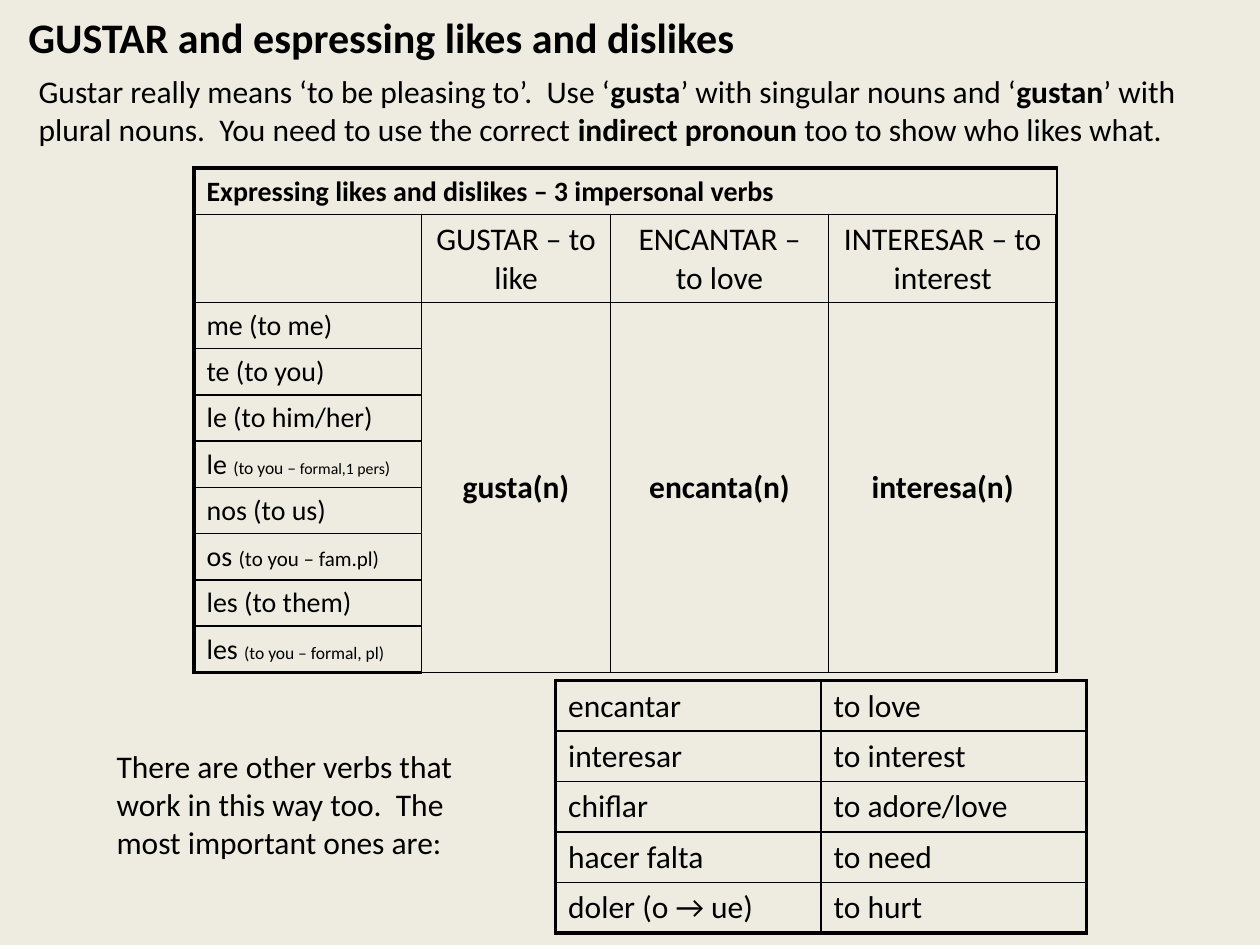
from dataclasses import dataclass

from lxml import etree
from pptx import Presentation
from pptx import util as u
from pptx.dml.color import RGBColor
from pptx.enum import text
from pptx.oxml import ns

Pt = u.Pt


@dataclass(frozen=True)
class Theme:
    font: str = "Calibri"
    ink: str = "000000"
    paper: str = "EEECE1"
    heading: int = 24
    body: int = 18
    row: int = 16
    note: int = 12
    small: int = 10
    tiny: int = 9
    frame: float = 2.25
    rule: float = 1


THEME = Theme()

PRONOUNS = [
    ["me (to me)"],
    ["te (to you)"],
    ["le (to him/her)"],
    ["le ", ("(to you – ", {"size": THEME.small}),
     ("formal,1 pers", {"size": THEME.tiny}), (")", {"size": THEME.small})],
    ["nos (to us)"],
    ["os ", ("(to you – fam.pl)", {"size": THEME.note})],
    ["les (to them)"],
    ["les ", ("(to you – formal, pl)", {"size": THEME.small})],
]
IMPERSONAL_VERBS = [
    ("GUSTAR – to like", "gusta(n)"),
    ("ENCANTAR – to love", "encanta(n)"),
    ("INTERESAR – to interest", "interesa(n)"),
]
OTHER_VERBS = [
    ("encantar", "to love"),
    ("interesar", "to interest"),
    ("chiflar", "to adore/love"),
    ("hacer falta", "to need"),
    ("doler (o → ue)", "to hurt"),
]


def write(frame, *parts, size=THEME.body, bold=False, align=text.PP_ALIGN.LEFT):
    paragraph = frame.paragraphs[0]
    paragraph.alignment = align
    for part in parts:
        wording, changes = (part, {}) if isinstance(part, str) else part
        run = paragraph.add_run()
        run.text = wording
        run.font.name = THEME.font
        run.font.size = Pt(changes.get("size", size))
        run.font.bold = changes.get("bold", bold)
        run.font.color.rgb = RGBColor.from_string(THEME.ink)


def place(box, left, top, width, height):
    box.left, box.top, box.width, box.height = map(Pt, (left, top, width, height))
    frame = box.text_frame
    frame.word_wrap = True
    frame.auto_size = text.MSO_AUTO_SIZE.SHAPE_TO_FIT_TEXT
    frame.vertical_anchor = text.MSO_ANCHOR.TOP
    return frame


def add_note(slide, bounds, *parts):
    box = slide.shapes.add_textbox(*map(Pt, bounds))
    write(place(box, *bounds), *parts)


def set_border(cell, side, weight):
    properties = cell._tc.get_or_add_tcPr()
    line = etree.SubElement(properties, ns.qn(f"a:ln{side}"), w=str(Pt(weight)))
    fill = etree.SubElement(line, ns.qn("a:solidFill"))
    etree.SubElement(fill, ns.qn("a:srgbClr"), val=THEME.ink)


def add_grid(slide, left, top, widths, heights):
    grid = slide.shapes.add_table(
        len(heights), len(widths), Pt(left), Pt(top),
        Pt(sum(widths)), Pt(sum(heights))).table
    grid.first_row = grid.horz_banding = False
    for column, width in zip(grid.columns, widths):
        column.width = Pt(width)
    for row, height in zip(grid.rows, heights):
        row.height = Pt(height)
    for r in range(len(heights)):
        for c in range(len(widths)):
            cell = grid.cell(r, c)
            outer = {"L": c == 0, "R": c == len(widths) - 1,
                     "T": r == 0, "B": r == len(heights) - 1}
            for side, on_frame in outer.items():
                set_border(cell, side, THEME.frame if on_frame else THEME.rule)
            cell.fill.background()
    return grid


def add_pronoun_table(slide):
    row_height = 26.4
    heights = [row_height, 50.4] + [row_height] * len(PRONOUNS)
    grid = add_grid(slide, 110.9, 96, [130, 108, 124.6, 130.4], heights)
    last = len(heights) - 1
    grid.cell(0, 0).merge(grid.cell(0, len(IMPERSONAL_VERBS)))
    write(grid.cell(0, 0).text_frame,
          "Expressing likes and dislikes – 3 impersonal verbs",
          size=THEME.row, bold=True)
    for c, (verb, form) in enumerate(IMPERSONAL_VERBS, 1):
        write(grid.cell(1, c).text_frame, verb, align=text.PP_ALIGN.CENTER)
        form_cell = grid.cell(2, c)
        form_cell.merge(grid.cell(last, c))
        form_cell.vertical_anchor = text.MSO_ANCHOR.MIDDLE
        write(form_cell.text_frame, form, bold=True, align=text.PP_ALIGN.CENTER)
    for r, pronoun in enumerate(PRONOUNS, 2):
        write(grid.cell(r, 0).text_frame, *pronoun, size=THEME.row)


def add_verb_table(slide):
    grid = add_grid(slide, 317.5, 389, [151.7] * 2, [28.8] * len(OTHER_VERBS))
    for r, entry in enumerate(OTHER_VERBS):
        for c, wording in enumerate(entry):
            write(grid.cell(r, c).text_frame, wording)


def main():
    deck = Presentation()
    deck.slide_width, deck.slide_height = Pt(720), Pt(540)
    slide = deck.slides.add_slide(deck.slide_layouts.get_by_name("Title Only"))
    slide.background.fill.solid()
    slide.background.fill.fore_color.rgb = RGBColor.from_string(THEME.paper)

    write(place(slide.shapes.title, 9, 3, 482, 36),
          "GUSTAR and espressing likes and dislikes",
          size=THEME.heading, bold=True)
    strong = {"bold": True}
    add_note(slide, (15, 37.5, 685.5, 51),
             "Gustar really means ‘to be pleasing to’.  Use ‘", ("gusta", strong),
             "’ with singular nouns and ‘", ("gustan", strong),
             "’ with plural nouns.  You need to use the correct ",
             ("indirect pronoun", strong), " too to show who likes what.")
    add_pronoun_table(slide)
    add_note(slide, (59.5, 423.5, 229, 72.7),
             "There are other verbs that work in this way too.  "
             "The most important ones are:")
    add_verb_table(slide)
    deck.save("out.pptx")


if __name__ == "__main__":
    main()
